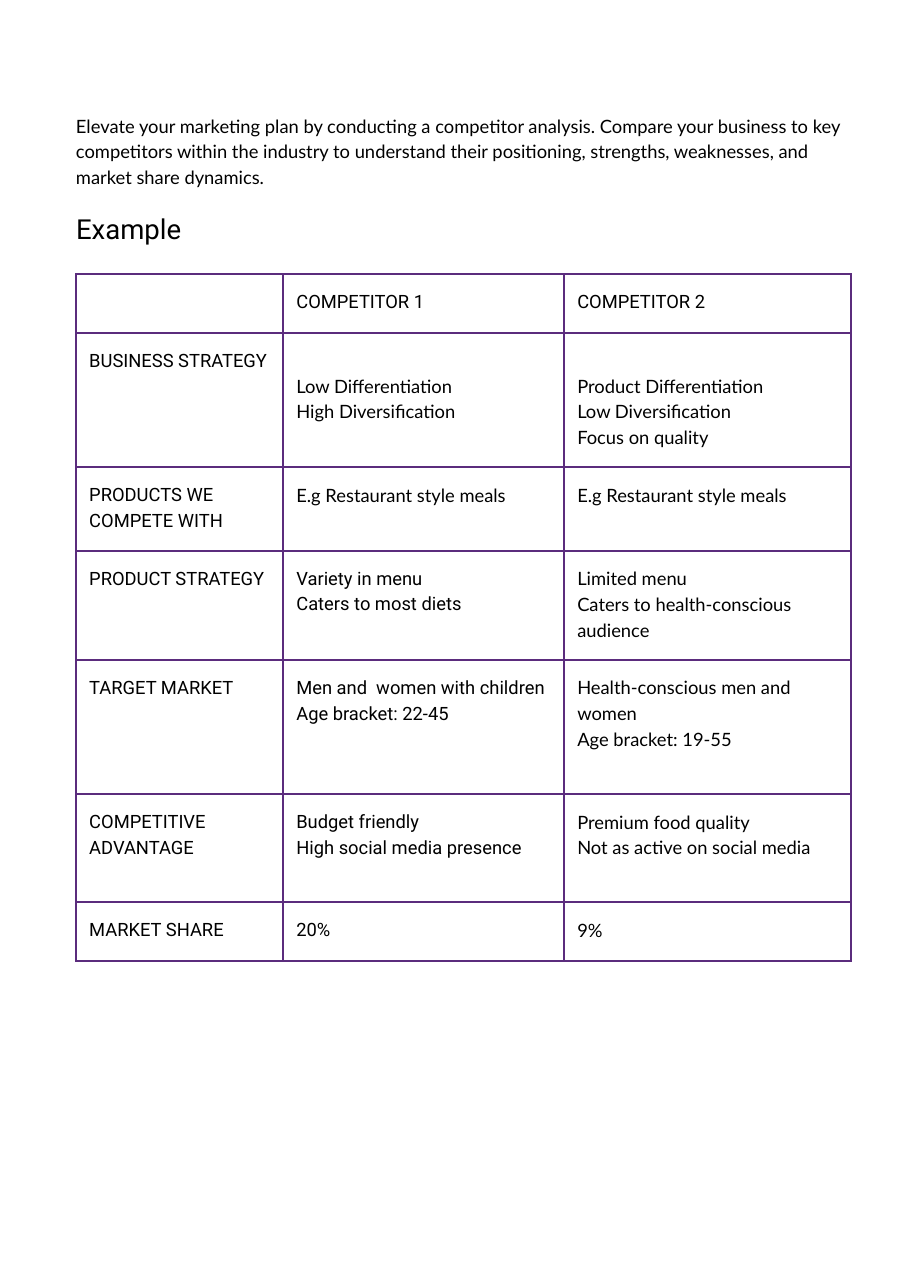
from dataclasses import dataclass

from lxml import etree
from pptx import Presentation
from pptx import util as u
from pptx.dml.color import RGBColor
from pptx.enum import text
from pptx.oxml.ns import qn

PX = 9144
BLACK = RGBColor(0x00, 0x00, 0x00)
PURPLE = RGBColor(0x5B, 0x2C, 0x7D)
HEADING_FONT = "Roboto"
BODY_FONT = "Lato"
LEFT, WIDTH = 69, 703
PADDING, LINE_HEIGHT = 12, 23
COLUMN_WIDTHS = (188, 255, 260)


@dataclass(frozen=True)
class Entry:
    lines: tuple[str, ...]
    font: str = BODY_FONT
    skipped_lines: int = 0


@dataclass(frozen=True)
class Aspect:
    height: int
    label: str
    first: Entry
    second: Entry


ASPECTS = (
    Aspect(53, "", Entry(("COMPETITOR 1",), HEADING_FONT),
           Entry(("COMPETITOR 2",), HEADING_FONT)),
    Aspect(122, "BUSINESS STRATEGY",
           Entry(("Low Differentiation", "High Diversification"), skipped_lines=1),
           Entry(("Product Differentiation", "Low Diversification", "Focus on quality"),
                 skipped_lines=1)),
    Aspect(76, "PRODUCTS WE COMPETE WITH",
           Entry(("E.g Restaurant style meals",)), Entry(("E.g Restaurant style meals",))),
    Aspect(99, "PRODUCT STRATEGY",
           Entry(("Variety in menu", "Caters to most diets"), HEADING_FONT),
           Entry(("Limited menu", "Caters to health-conscious audience"))),
    Aspect(122, "TARGET MARKET",
           Entry(("Men and  women with children", "Age bracket: 22-45"), HEADING_FONT),
           Entry(("Health-conscious men and women", "Age bracket: 19-55"))),
    Aspect(98, "COMPETITIVE ADVANTAGE",
           Entry(("Budget friendly", "High social media presence"), HEADING_FONT),
           Entry(("Premium food quality", "Not as active on social media"))),
    Aspect(53, "MARKET SHARE", Entry(("20%",), HEADING_FONT), Entry(("9%",))),
)


def px(length: int) -> u.Emu:
    return u.Emu(length * PX)


def write(frame, lines: tuple[str, ...], font: str, size: int = 12) -> None:
    frame.text = "\n".join(lines)
    for paragraph in frame.paragraphs:
        paragraph.alignment = text.PP_ALIGN.LEFT
        paragraph.line_spacing = u.Pt(size * 1.4)
        paragraph.space_before = u.Pt(0)
        paragraph.font.name = font
        paragraph.font.size = u.Pt(size)
        paragraph.font.color.rgb = BLACK


def write_block(block, top: int, height: int, content: str, font: str, size: int) -> None:
    block.left, block.top, block.width, block.height = map(px, (LEFT, top, WIDTH, height))
    frame = block.text_frame
    frame.margin_left = frame.margin_right = frame.margin_top = frame.margin_bottom = 0
    frame.word_wrap = True
    frame.auto_size = text.MSO_AUTO_SIZE.NONE
    frame.vertical_anchor = text.MSO_ANCHOR.TOP
    write(frame, (content,), font, size)


def outline(cell) -> None:
    properties = cell._tc.get_or_add_tcPr()
    for side in ("a:lnL", "a:lnR", "a:lnT", "a:lnB"):
        border = etree.SubElement(properties, qn(side), w=str(u.Pt(1.5)))
        fill = etree.SubElement(border, qn("a:solidFill"))
        etree.SubElement(fill, qn("a:srgbClr"), val=str(PURPLE))


def fill_cell(cell, entry: Entry) -> None:
    outline(cell)
    cell.fill.background()
    if any(entry.lines):
        cell.margin_left = cell.margin_right = cell.margin_bottom = px(PADDING)
        cell.margin_top = px(PADDING + entry.skipped_lines * LINE_HEIGHT)
        write(cell.text_frame, entry.lines, entry.font)


def add_comparison(slide) -> None:
    height = sum(aspect.height for aspect in ASPECTS)
    comparison = slide.shapes.add_table(
        len(ASPECTS), len(COLUMN_WIDTHS), px(LEFT), px(249), px(WIDTH), px(height)).table
    comparison.first_row = comparison.horz_banding = False
    for column, width in zip(comparison.columns, COLUMN_WIDTHS):
        column.width = px(width)
    for row, aspect in zip(comparison.rows, ASPECTS):
        row.height = px(aspect.height)
        label = Entry((aspect.label,), HEADING_FONT)
        for cell, entry in zip(row.cells, (label, aspect.first, aspect.second)):
            fill_cell(cell, entry)


def main() -> None:
    deck = Presentation()
    deck.slide_width, deck.slide_height = px(826), px(1169)
    slide = deck.slides.add_slide(deck.slide_layouts[5])
    introduction = slide.shapes.add_textbox(0, 0, 0, 0)
    write_block(
        introduction, 101, 90,
        "Elevate your marketing plan by conducting a competitor analysis. Compare your "
        "business to key competitors within the industry to understand their positioning, "
        "strengths, weaknesses, and market share dynamics.", BODY_FONT, 12)
    add_comparison(slide)
    write_block(slide.shapes.title, 187, 35, "Example", HEADING_FONT, 18)
    deck.save("out.pptx")


if __name__ == "__main__":
    main()
